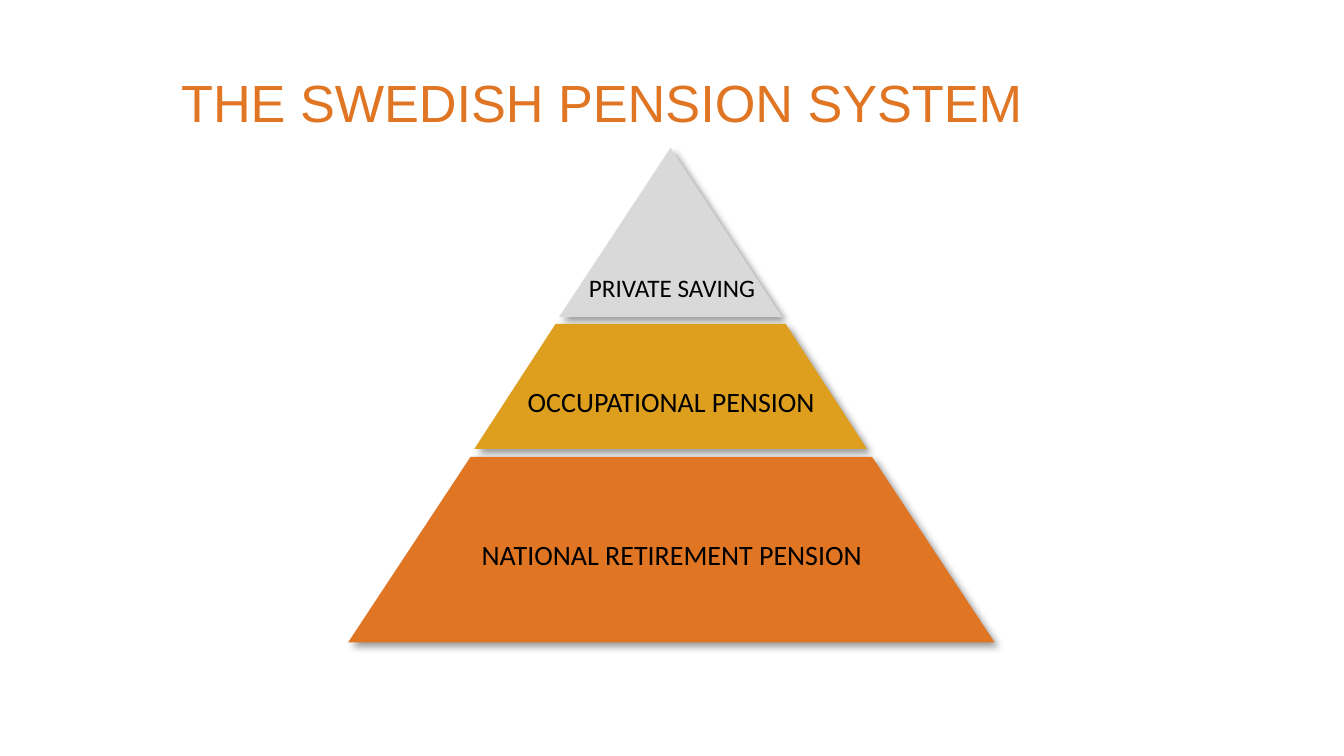
from lxml import etree
from pptx import Presentation
from pptx.dml.color import RGBColor
from pptx.enum.shapes import MSO_SHAPE
from pptx.enum.text import MSO_AUTO_SIZE, PP_ALIGN
from pptx.oxml.ns import qn
from pptx.util import Inches, Pt

TRIANGLE = MSO_SHAPE.ISOSCELES_TRIANGLE
TRAPEZOID = MSO_SHAPE.TRAPEZOID
CENTER = PP_ALIGN.CENTER
GROW = MSO_AUTO_SIZE.SHAPE_TO_FIT_TEXT

COLORS = {
    "orange": "E07523",
    "gold": "DE9F1F",
    "gray": "D9D9D9",
    "black": "000000",
}

TIERS = [
    (TRIANGLE, (4.16, 1.1, 1.66, 1.26), None, "gray"),
    (TRAPEZOID, (3.53, 2.41, 2.92, 0.93), 0.65, "gold"),
    (TRAPEZOID, (2.59, 3.4, 4.81, 1.38), 0.66, "orange"),
]

LABELS = [
    ("PRIVATE SAVING", (4.27, 1.98, 1.46, 0.33), 13.5),
    ("OCCUPATIONAL PENSION", (3.81, 2.81, 2.37, 0.61), 15),
    ("NATIONAL RETIREMENT PENSION", (3.22, 3.95, 3.56, 0.35), 15),
]


def rgb(name):
    return RGBColor.from_string(COLORS[name])


def add_shadow(sp):
    sp.shadow.inherit = False
    effects = sp._element.spPr.find(qn("a:effectLst"))
    shadow = etree.SubElement(
        effects, qn("a:outerShdw"), blurRad=str(Pt(4)), dist=str(Pt(3)),
        dir=str(45 * 60000), algn="tl", rotWithShape="0")
    color = etree.SubElement(shadow, qn("a:srgbClr"), val=COLORS["black"])
    etree.SubElement(color, qn("a:alpha"), val="40000")


def add_tier(s, kind, box, slant, color):
    sp = s.shapes.add_shape(kind, *map(Inches, box))
    if slant is not None:
        sp.adjustments[0] = slant
    sp.fill.solid()
    sp.fill.fore_color.rgb = rgb(color)
    sp.line.fill.background()
    add_shadow(sp)


def add_text(s, text, box, size, font, color):
    tf = s.shapes.add_textbox(*map(Inches, box)).text_frame
    tf.word_wrap = True
    p = tf.paragraphs[0]
    p.text = text
    p.font.name = font
    p.font.size = Pt(size)
    p.font.color.rgb = rgb(color)
    return tf


def add_title(s, text):
    tf = add_text(s, text, (1.25, 0.54, 7.5, 0.57), 28, "Arial", "orange")
    tf.margin_top = Inches(0.06)
    tf.paragraphs[0].line_spacing = 0.83


def add_label(s, text, box, size):
    tf = add_text(s, text, box, size, "Calibri", "black")
    tf.auto_size = GROW
    tf.paragraphs[0].alignment = CENTER


def main():
    prs = Presentation()
    prs.slide_width = Inches(10)
    prs.slide_height = Inches(10 * 9 / 16)
    s = prs.slides.add_slide(prs.slide_layouts[6])
    add_title(s, "THE SWEDISH PENSION SYSTEM")
    for tier in TIERS:
        add_tier(s, *tier)
    for label in LABELS:
        add_label(s, *label)
    prs.save("out.pptx")


if __name__ == "__main__":
    main()
